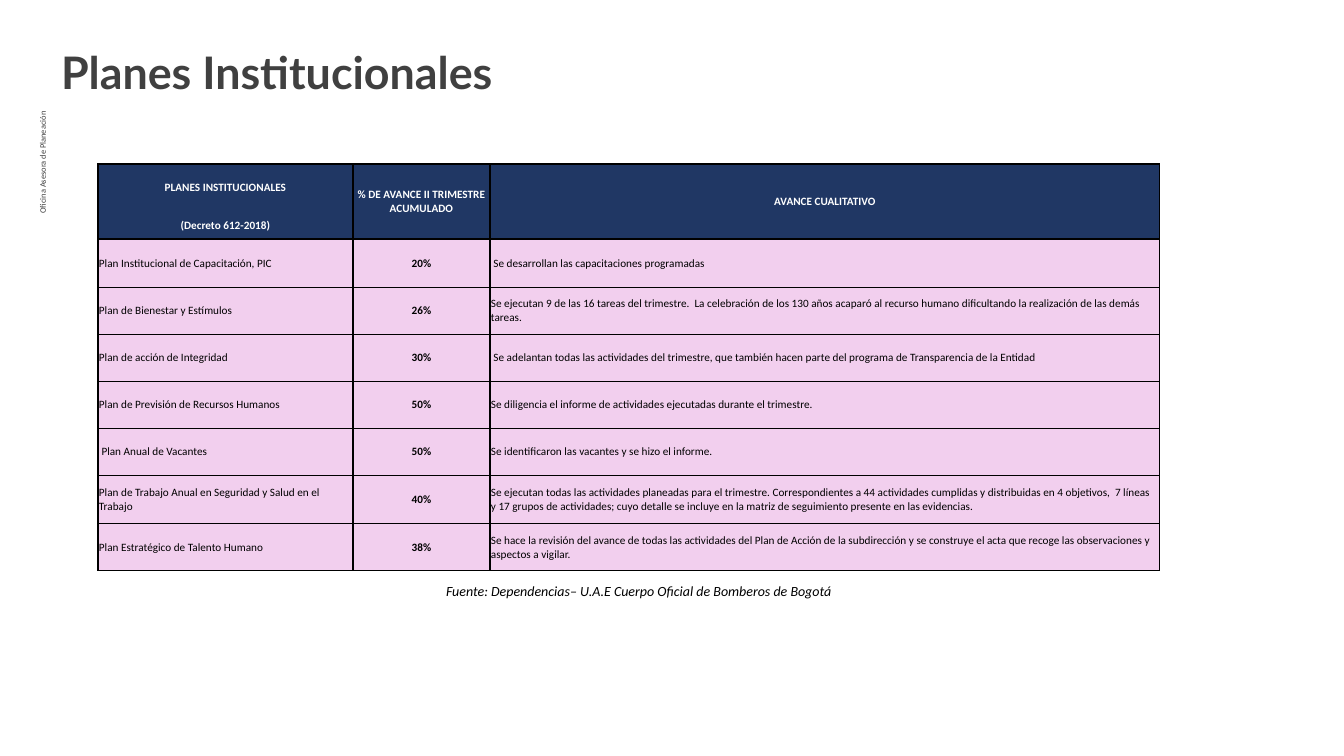
import pptx
import pptx.dml.color
import pptx.enum.text
import pptx.oxml.ns
import pptx.util
from lxml import etree

PX = 914400 / 100.8
LEFT, CENTER, RIGHT = (pptx.enum.text.PP_ALIGN.LEFT, pptx.enum.text.PP_ALIGN.CENTER,
                       pptx.enum.text.PP_ALIGN.RIGHT)
MIDDLE = pptx.enum.text.MSO_ANCHOR.MIDDLE
NAVY, PINK, GRAY, BLACK, WHITE = "203764", "F2CFEE", "404040", "000000", "FFFFFF"

COLUMNS = [255, 137, 670]
HEADER_ROWS = [
    ("PLANES INSTITUCIONALES", "% DE AVANCE II TRIMESTRE ACUMULADO", "AVANCE CUALITATIVO"),
    ("(Decreto 612-2018)", "", ""),
]
PLANS = [
    ("Plan Institucional de Capacitación, PIC", "20%",
     " Se desarrollan las capacitaciones programadas"),
    ("Plan de Bienestar y Estímulos", "26%",
     "Se ejecutan 9 de las 16 tareas del trimestre.  La celebración de los 130 años acaparó "
     "al recurso humano dificultando la realización de las demás tareas."),
    ("Plan de acción de Integridad", "30%",
     " Se adelantan todas las actividades del trimestre, que también hacen parte del "
     "programa de Transparencia de la Entidad"),
    ("Plan de Previsión de Recursos Humanos", "50%",
     "Se diligencia el informe de actividades ejecutadas durante el trimestre."),
    (" Plan Anual de Vacantes", "50%",
     "Se identificaron las vacantes y se hizo el informe."),
    ("Plan de Trabajo Anual en Seguridad y Salud en el Trabajo", "40%",
     "Se ejecutan todas las actividades planeadas para el trimestre. Correspondientes a 44 "
     "actividades cumplidas y distribuidas en 4 objetivos,  7 líneas y 17 grupos de "
     "actividades; cuyo detalle se incluye en la matriz de seguimiento presente en las "
     "evidencias."),
    ("Plan Estratégico de Talento Humano", "38%",
     "Se hace la revisión del avance de todas las actividades del Plan de Acción de la "
     "subdirección y se construye el acta que recoge las observaciones y aspectos a vigilar."),
]
ROW_HEIGHTS = [47, 28, 48, 47, 47, 47, 47, 48, 48]


def px(n):
    return pptx.util.Emu(round(n * PX))


def rgb(color):
    return pptx.dml.color.RGBColor.from_string(color)


def write(tf, text, size=8, font="Calibri", color=BLACK, bold=False, italic=False, align=LEFT):
    p = tf.paragraphs[0]
    p.alignment = align
    r = p.add_run()
    r.text = text
    r.font.size = pptx.util.Pt(size)
    r.font.name = font
    r.font.bold = bold
    r.font.italic = italic
    r.font.color.rgb = rgb(color)


def add_text(slide, text, x, y, w, h, rotation=0, margins=(10, 5), **fmt):
    sp = slide.shapes.add_textbox(px(x), px(y), px(w), px(h))
    sp.rotation = rotation
    tf = sp.text_frame
    tf.word_wrap = True
    tf.margin_left = tf.margin_right = px(margins[0])
    tf.margin_top = tf.margin_bottom = px(margins[1])
    write(tf, text, **fmt)


def set_border(cell, side, width):
    """Draw one cell edge; a width of 0 leaves it empty."""
    tc_pr = cell._tc.get_or_add_tcPr()
    qn = pptx.oxml.ns.qn
    ln = etree.SubElement(tc_pr, qn("a:ln" + side), w=str(pptx.util.Pt(width)))
    if width:
        fill = etree.SubElement(ln, qn("a:solidFill"))
        etree.SubElement(fill, qn("a:srgbClr"), val=BLACK)
    else:
        etree.SubElement(ln, qn("a:noFill"))


def edge_width(edge, last):
    """Width of the horizontal rule above row number edge."""
    if edge == 1:
        return 0
    return 1 if edge in (0, len(HEADER_ROWS), last) else 0.5


def format_cell(cell, fill, top, bottom):
    cell.vertical_anchor = MIDDLE
    cell.margin_left = cell.margin_right = cell.margin_top = px(1)
    cell.margin_bottom = 0
    for side, width in (("L", 1), ("R", 1), ("T", top), ("B", bottom)):
        set_border(cell, side, width)
    cell.fill.solid()
    cell.fill.fore_color.rgb = rgb(fill)


def add_plans_table(slide, x, y):
    rows = HEADER_ROWS + PLANS
    table = slide.shapes.add_table(len(rows), len(COLUMNS), px(x), px(y),
                                   px(sum(COLUMNS)), px(sum(ROW_HEIGHTS))).table
    table.first_row = table.horz_banding = False
    for column, width in zip(table.columns, COLUMNS):
        column.width = px(width)
    for i, texts in enumerate(rows):
        table.rows[i].height = px(ROW_HEIGHTS[i])
        header = i < len(HEADER_ROWS)
        for j, text in enumerate(texts):
            cell = table.cell(i, j)
            format_cell(cell, NAVY if header else PINK,
                        edge_width(i, len(rows)), edge_width(i + 1, len(rows)))
            write(cell.text_frame, text, color=WHITE if header else BLACK,
                  bold=header or j == 1, align=CENTER if header or j == 1 else LEFT)
    # The last two headings span both header rows
    for j in (1, 2):
        table.cell(0, j).merge(table.cell(1, j))


def add_title(slide, text, x, y, w, h):
    sp = slide.shapes.title
    sp.left, sp.top, sp.width, sp.height = px(x), px(y), px(w), px(h)
    tf = sp.text_frame
    tf.vertical_anchor = MIDDLE
    tf.auto_size = pptx.enum.text.MSO_AUTO_SIZE.NONE
    write(tf, text, size=32, font="Lato", color=GRAY, bold=True)


def main():
    prs = pptx.Presentation()
    prs.slide_width, prs.slide_height = px(1344), px(756)
    slide = prs.slides.add_slide(prs.slide_layouts[5])

    # Heading and side label
    add_title(slide, "Planes Institucionales", 51, 39, 1075, 65)
    add_text(slide, "Oficina Asesora de Planeación", -88, 226, 261, 18, rotation=270,
             margins=(7, 4), size=6, color=GRAY, align=RIGHT)

    # Progress table and its source
    add_plans_table(slide, 98, 164)
    add_text(slide, "Fuente: Dependencias– U.A.E Cuerpo Oficial de Bomberos de Bogotá",
             436, 578, 672, 27, size=10, italic=True)

    prs.save("out.pptx")


if __name__ == "__main__":
    main()
